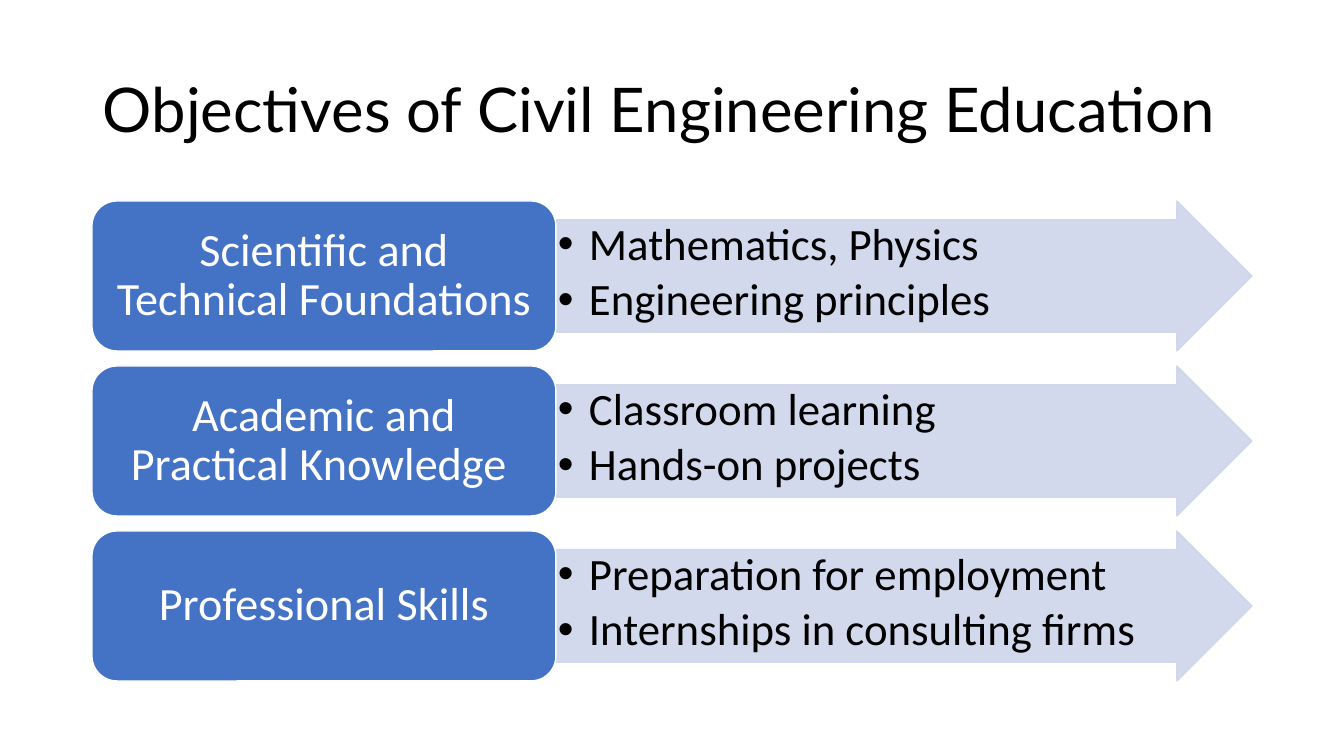
from lxml import etree
from pptx import Presentation
from pptx.dml.color import RGBColor
from pptx.enum.shapes import MSO_SHAPE
from pptx.enum.text import MSO_ANCHOR, PP_ALIGN
from pptx.oxml.ns import qn
from pptx.util import Pt

ARROW = MSO_SHAPE.RIGHT_ARROW
ROUND_RECT = MSO_SHAPE.ROUNDED_RECTANGLE
TOP, MIDDLE = MSO_ANCHOR.TOP, MSO_ANCHOR.MIDDLE
LEFT, CENTER = PP_ALIGN.LEFT, PP_ALIGN.CENTER

BLACK = RGBColor(0x00, 0x00, 0x00)
WHITE = RGBColor(0xFF, 0xFF, 0xFF)
BLUE = RGBColor(0x44, 0x72, 0xC4)
PALE_BLUE = RGBColor(0xCF, 0xD5, 0xEA)

EMU_PER_PX = 914400 / 100.8
ROW_HEIGHT = 150
ROW_PITCH = 165
LABEL_WIDTH = 464

OBJECTIVES = [
    ("Scientific and Technical Foundations",
     ["Mathematics, Physics", "Engineering principles"]),
    ("Academic and Practical Knowledge ",
     ["Classroom learning", "Hands-on projects"]),
    ("Professional Skills",
     ["Preparation for employment", "Internships in consulting firms"]),
]


def px(n):
    return round(n * EMU_PER_PX)


def set_frame(tf, anchor, inset_x, inset_y):
    tf.word_wrap = True
    tf.vertical_anchor = anchor
    tf.margin_left = tf.margin_right = px(inset_x)
    tf.margin_top = tf.margin_bottom = px(inset_y)


def add_text(p, text, font, size, color, align):
    p.alignment = align
    p.line_spacing = 0.9
    r = p.add_run()
    r.text = text
    r.font.name = font
    r.font.size = Pt(size)
    r.font.color.rgb = color


def add_bullet(p, indent):
    pPr = p._p.get_or_add_pPr()
    pPr.set("marL", str(px(indent)))
    pPr.set("indent", str(-px(indent)))
    etree.SubElement(pPr, qn("a:buFont")).set("typeface", "Arial")
    etree.SubElement(pPr, qn("a:buChar")).set("char", "•")


def add_block(slide, preset, x, y, w, h, fill, line):
    sp = slide.shapes.add_shape(preset, px(x), px(y), px(w), px(h))
    sp.shadow.inherit = False
    sp.fill.solid()
    sp.fill.fore_color.rgb = fill
    sp.line.color.rgb = line
    sp.line.width = Pt(1)
    return sp


def add_title(slide, x, y, w, h):
    tf = slide.shapes.add_textbox(px(x), px(y), px(w), px(h)).text_frame
    set_frame(tf, MIDDLE, 10, 5)
    add_text(tf.paragraphs[0], "Objectives of Civil Engineering Education",
             "Lato", 44, BLACK, LEFT)


def add_arrow(slide, x, y, w, h, points):
    sp = add_block(slide, ARROW, x, y, w, h, PALE_BLUE, PALE_BLUE)
    sp.adjustments[0] = 0.75
    sp.adjustments[1] = 0.5
    for color in sp._element.spPr.iter(qn("a:srgbClr")):
        etree.SubElement(color, qn("a:alpha")).set("val", "90000")
    tf = sp.text_frame
    set_frame(tf, TOP, 2, 2)
    for i, point in enumerate(points):
        p = tf.add_paragraph() if i else tf.paragraphs[0]
        add_bullet(p, 31)
        add_text(p, point, "Calibri", 32, BLACK, LEFT)
        p.space_after = Pt(5)


def add_label(slide, x, y, w, h, text):
    sp = add_block(slide, ROUND_RECT, x, y, w, h, BLUE, WHITE)
    set_frame(sp.text_frame, MIDDLE, 14, 7)
    add_text(sp.text_frame.paragraphs[0], text, "Calibri", 33, WHITE, CENTER)


def add_objectives(slide, x, y, w):
    for i, (label, points) in enumerate(OBJECTIVES):
        top = y + i * ROW_PITCH
        add_arrow(slide, x + LABEL_WIDTH, top, w - LABEL_WIDTH, ROW_HEIGHT, points)
        add_label(slide, x, top, LABEL_WIDTH, ROW_HEIGHT, label)


def main():
    prs = Presentation()
    prs.slide_width, prs.slide_height = px(1344), px(756)
    slide = prs.slides.add_slide(prs.slide_layouts[6])
    add_title(slide, 93, 40, 1159, 146)
    add_objectives(slide, 92, 201, 1160)
    prs.save("out.pptx")


if __name__ == "__main__":
    main()
